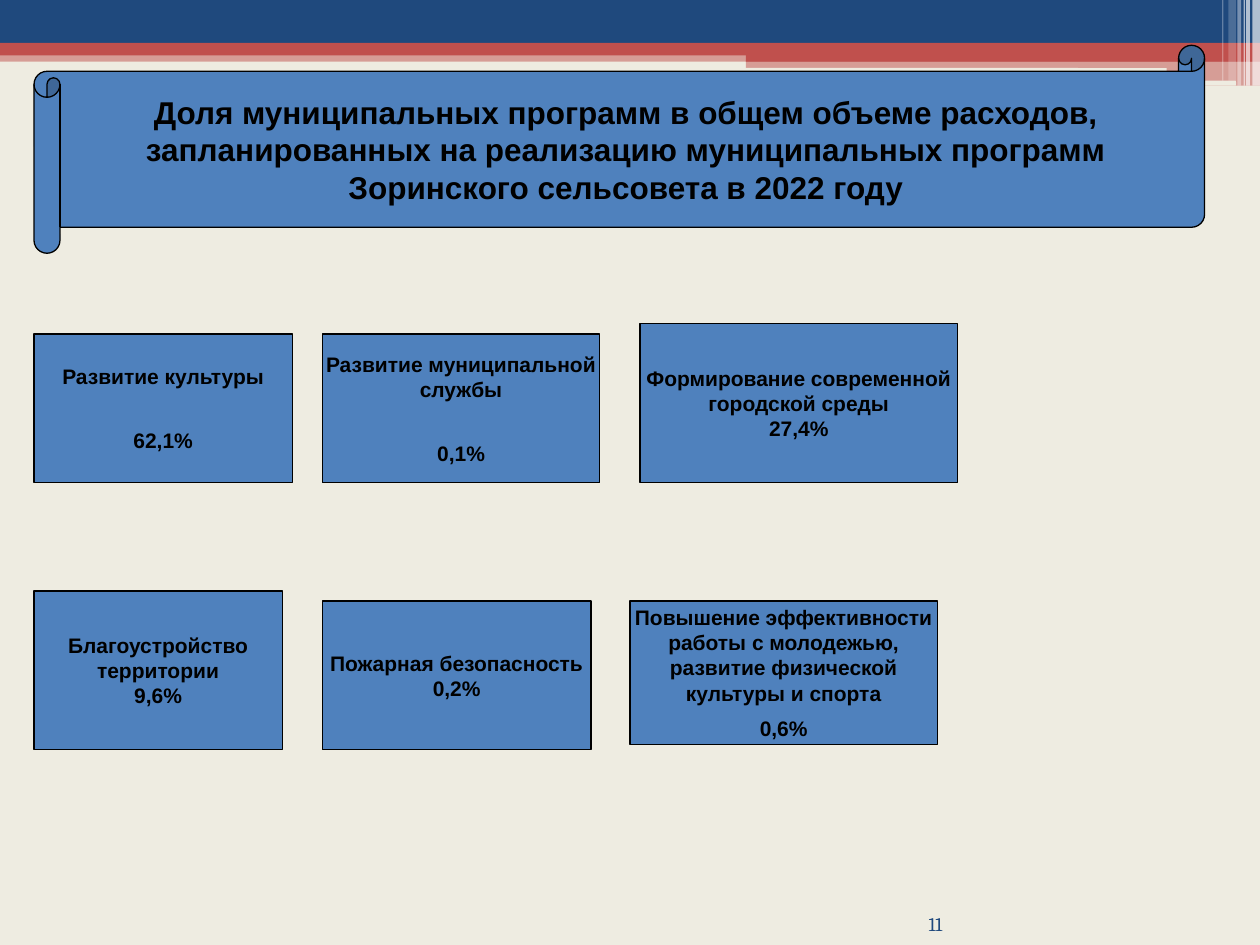
"""Build the slide on the share of municipal programmes in planned spending."""
from pptx import Presentation
from pptx.dml.color import RGBColor
from pptx.enum.shapes import MSO_SHAPE as Shape
from pptx.enum.text import MSO_ANCHOR as Anchor, PP_ALIGN as Align
from pptx.oxml.ns import qn
from pptx.util import Inches, Pt
from lxml.etree import SubElement

NAVY, RED, CREAM, WHITE = "1F497D", "C0504D", "EEECE1", "FFFFFF"
BLUE, BLACK = "4F81BD", "000000"

BANDS = [
    (Shape.RECTANGLE, (0, 0.4, 10, 0.09), RED, 50),
    (Shape.RECTANGLE, (0, 0, 10, 0.34), NAVY, 100),
    (Shape.RECTANGLE, (0, 0.34, 10, 0.1), RED, 100),
    (Shape.RECTANGLE, (5.92, 0.39, 4.08, 0.1), RED, 100),
    (Shape.RECTANGLE, (5.92, 0.48, 4.08, 0.2), RED, 50),
    (Shape.ROUNDED_RECTANGLE, (5.91, 0.54, 3.35, 0.03), CREAM, 100),
    (Shape.ROUNDED_RECTANGLE, (8.06, 0.64, 1.75, 0.04), CREAM, 100),
]
STRIPES = [
    (9.94, 0.06, 0.68, 65),
    (9.89, 0.03, 0.68, 65),
    (9.87, 0.01, 0.68, 60),
    (9.82, 0.03, 0.68, 40),
    (9.75, 0.06, 0.64, 20),
    (9.7, 0.01, 0.64, 30),
]
TITLE = [
    "Доля муниципальных программ в общем объеме расходов,",
    "запланированных на реализацию муниципальных программ",
    "Зоринского сельсовета в 2022 году",
]
PROGRAMMES = [
    ((0.27, 2.65, 2.05, 1.18), ["Развитие культуры"], "62,1%", 22),
    ((2.56, 2.65, 2.2, 1.18), ["Развитие муниципальной", "службы"], "0,1%", 22),
    ((5.08, 2.57, 2.52, 1.26), ["Формирование современной", "городской среды"], "27,4%", 0),
    ((0.27, 4.69, 1.97, 1.26), ["Благоустройство", "территории"], "9,6%", 0),
    ((2.56, 4.77, 2.13, 1.18), ["Пожарная безопасность"], "0,2%", 0),
    ((5, 4.77, 2.44, 1.14), ["Повышение эффективности", "работы с молодежью,",
                             "развитие физической", "культуры и спорта"], "0,6%", 6),
]


def rgb(value):
    return RGBColor.from_string(value)


def add_filled(slide, kind, box, color, opacity=100):
    shape = slide.shapes.add_shape(kind, *map(Inches, box))
    shape.shadow.inherit = False
    shape.fill.solid()
    shape.fill.fore_color.rgb = rgb(color)
    shape.line.fill.background()
    if opacity < 100:
        fill_color = shape._element.spPr.find(qn("a:solidFill"))[0]
        SubElement(fill_color, qn("a:alpha")).set("val", str(opacity * 1000))
    return shape


def write(shape, lines, size, font="Arial", color=BLACK, bold=True, align=Align.CENTER):
    frame = shape.text_frame
    frame.word_wrap = False
    frame.text = "\n".join(lines)
    for paragraph in frame.paragraphs:
        paragraph.alignment = align
        paragraph.font.name = font
        paragraph.font.size = Pt(size)
        paragraph.font.bold = bold
        paragraph.font.color.rgb = rgb(color)
    return frame


def add_panel(slide, kind, box, lines, size):
    shape = add_filled(slide, kind, box, BLUE)
    shape.line.color.rgb = rgb(BLACK)
    shape.line.width = Pt(0.75)
    frame = write(shape, lines, size)
    frame.vertical_anchor = Anchor.MIDDLE
    return frame


def add_slide_number(slide, number):
    text_box = slide.shapes.add_textbox(*map(Inches, (6.84, 7.17, 0.64, 0.25)))
    frame = write(text_box, [number], 11, "Cambria", NAVY, False, Align.RIGHT)
    frame.word_wrap = True
    frame.vertical_anchor = Anchor.BOTTOM
    frame.margin_left = frame.margin_right = frame.margin_top = frame.margin_bottom = 0


def main():
    presentation = Presentation()
    presentation.slide_width, presentation.slide_height = Inches(10), Inches(7.5)
    slide = presentation.slides.add_slide(presentation.slide_layouts[6])
    slide.background.fill.solid()
    slide.background.fill.fore_color.rgb = rgb(CREAM)

    for kind, box, color, opacity in BANDS:
        add_filled(slide, kind, box, color, opacity)
    for left, width, height, opacity in STRIPES:
        add_filled(slide, Shape.RECTANGLE, (left, 0, width, height), WHITE, opacity)
    add_slide_number(slide, "11")
    for box, name, share, gap in PROGRAMMES:
        frame = add_panel(slide, Shape.FLOWCHART_PROCESS, box, name + [share], 12)
        frame.paragraphs[-1].space_before = Pt(gap)
    add_panel(slide, Shape.HORIZONTAL_SCROLL, (0.27, 0.36, 9.29, 1.65), TITLE, 18)
    presentation.save("out.pptx")


if __name__ == "__main__":
    main()
